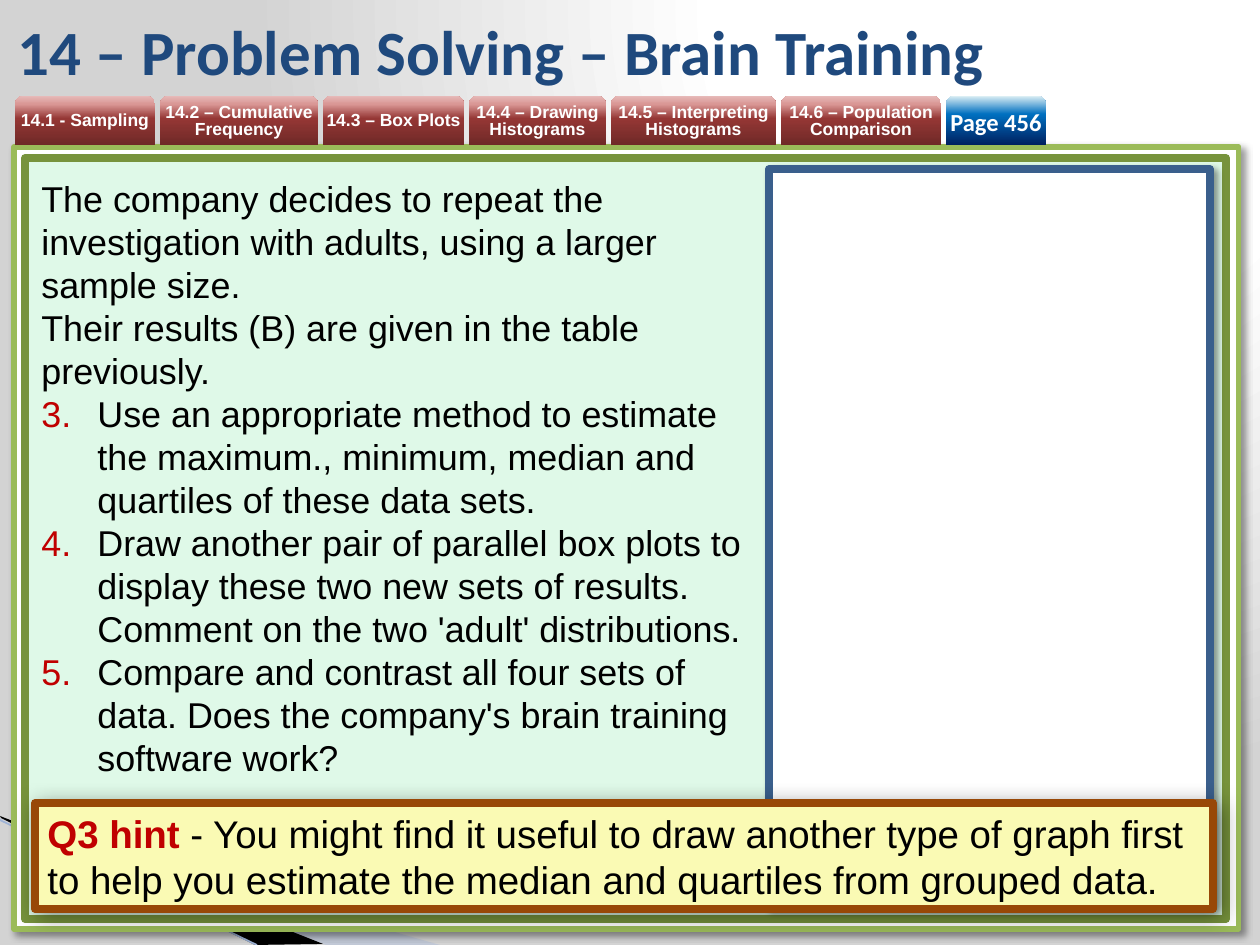
import dataclasses

import pptx
import pptx.dml.color
import pptx.enum.shapes
import pptx.enum.text
import pptx.oxml
import pptx.oxml.ns
import pptx.util

EMU_PER_PX = 914400 / 126
SHAPE = pptx.enum.shapes.MSO_SHAPE
ALIGN = pptx.enum.text.PP_ALIGN
ANCHOR = pptx.enum.text.MSO_ANCHOR
qn = pptx.oxml.ns.qn


@dataclasses.dataclass(frozen=True)
class Theme:
    heading_font: str = "Calibri"
    body_font: str = "Arial"
    title_size: float = 36
    body_size: float = 20.5
    hint_size: float = 22
    tab_size: float = 10
    page_size: float = 14
    frame_width: float = 4.33
    outer_width: float = 3
    ribbon_width: float = 0.95
    white: str = "FFFFFF"
    black: str = "000000"
    title: str = "1F497D"
    accent: str = "C00000"
    outer_line: str = "9BBB59"
    panel: str = "DFF9E8"
    panel_line: str = "77933C"
    answer_line: str = "3A5F8C"
    hint: str = "FAFAB4"
    hint_line: str = "984807"
    ribbon: str = "A7B9DB"
    ribbon_line: str = "9EB3D6"
    backdrop: tuple = ((0, "FFFFFF"), (40, "FFFFFF"), (100, "D3D3D3"))
    tab: tuple = ((0, "6F2927"), (54, "953735"), (83, "D99694"), (100, "E6B9B8"))
    page: tuple = ((0, "002060"), (63, "0070C0"), (100, "DBEEF4"))


def px(length):
    return round(length * EMU_PER_PX)


def rgb(color):
    return pptx.dml.color.RGBColor.from_string(color)


def add_xml(parent, tag, **attributes):
    element = pptx.oxml.parse_xml(f"<a:{tag} {pptx.oxml.ns.nsdecls('a')}/>")
    for key, value in attributes.items():
        element.set(key, str(value))
    parent.append(element)
    return element


class SlideBuilder:
    def __init__(self, slide, theme):
        self.slide = slide
        self.shapes = slide.shapes
        self.theme = theme

    def gradient(self, fill, holder, stops):
        fill.gradient()
        grad = next(holder.iter(qn("a:gradFill")))
        for child in list(grad):
            grad.remove(child)
        stop_list = add_xml(grad, "gsLst")
        for position, color in stops:
            stop = add_xml(stop_list, "gs", pos=position * 1000)
            add_xml(stop, "srgbClr", val=color)
        return grad

    def backdrop(self):
        grad = self.gradient(self.slide.background.fill, self.slide.element, self.theme.backdrop)
        focus = add_xml(grad, "path", path="circle")
        add_xml(focus, "fillToRect", l=65000, t=0, r=0, b=98000)

    def style(self, font, size, color, name=None, bold=False):
        font.name = name or self.theme.body_font
        font.size = pptx.util.Pt(size)
        font.bold = bold
        font.color.rgb = rgb(color)

    def title(self, text, box):
        title = self.shapes.title
        title.left, title.top, title.width, title.height = map(px, box)
        title.text_frame.text = text
        title.text_frame.vertical_anchor = ANCHOR.MIDDLE
        heading = title.text_frame.paragraphs[0]
        heading.alignment = ALIGN.LEFT
        self.style(heading.font, self.theme.title_size, self.theme.title, self.theme.heading_font, True)

    def ribbon(self, points, color, opacity=100):
        outline = self.shapes.build_freeform(*points[0], scale=EMU_PER_PX)
        outline.add_line_segments(points[1:], close=True)
        ribbon = outline.convert_to_shape()
        ribbon.shadow.inherit = False
        ribbon.fill.solid()
        ribbon.fill.fore_color.rgb = rgb(color)
        ribbon.line.fill.background()
        if opacity < 100:
            solid = ribbon.element.spPr.find(qn("a:solidFill"))
            add_xml(solid[0], "alpha", val=opacity * 1000)

    def line(self, start, end, color, width):
        edge = self.shapes.add_connector(
            pptx.enum.shapes.MSO_CONNECTOR.STRAIGHT, *map(px, start + end))
        edge.line.color.rgb = rgb(color)
        edge.line.width = pptx.util.Pt(width)
        add_xml(edge.element.spPr, "effectLst")

    def panel(self, box, fill, line, width, blur=None):
        panel = self.shapes.add_shape(SHAPE.RECTANGLE, *map(px, box))
        panel.shadow.inherit = False
        panel.fill.solid()
        panel.fill.fore_color.rgb = rgb(fill)
        panel.line.color.rgb = rgb(line)
        panel.line.width = pptx.util.Pt(width)
        if blur:
            effects = panel.element.spPr.find(qn("a:effectLst"))
            shadow = add_xml(effects, "outerShdw", blurRad=pptx.util.Pt(blur),
                             dist=pptx.util.Pt(3), dir=45 * 60000, algn="tl", rotWithShape=0)
            add_xml(add_xml(shadow, "srgbClr", val=self.theme.black), "alpha", val=40000)
        return panel

    def tab(self, text, box, stops, size, name, spacing=None):
        tab = self.shapes.add_shape(SHAPE.ROUND_2_SAME_RECTANGLE, *map(px, box))
        tab.shadow.inherit = False
        tab.line.fill.background()
        grad = self.gradient(tab.fill, tab.element.spPr, stops)
        add_xml(grad, "lin", ang=270 * 60000, scaled=0)
        frame = tab.text_frame
        frame.margin_left = frame.margin_right = frame.margin_top = frame.margin_bottom = 0
        frame.word_wrap = True
        frame.vertical_anchor = ANCHOR.MIDDLE
        frame.text = text
        label = frame.paragraphs[0]
        label.alignment = ALIGN.CENTER
        if spacing:
            label.line_spacing = pptx.util.Pt(spacing)
        self.style(label.font, size, self.theme.white, name, True)

    def body(self, box, intro, questions, first_number):
        frame = self.shapes.add_textbox(*map(px, box)).text_frame
        frame.word_wrap = True
        frame.auto_size = pptx.enum.text.MSO_AUTO_SIZE.SHAPE_TO_FIT_TEXT
        for index, text in enumerate(intro + questions):
            paragraph = frame.paragraphs[0] if index == 0 else frame.add_paragraph()
            paragraph.text = text
            if index >= len(intro):
                properties = paragraph._p.get_or_add_pPr()
                properties.set("marL", str(px(56)))
                properties.set("indent", str(-px(56)))
                add_xml(add_xml(properties, "buClr"), "srgbClr", val=self.theme.accent)
                add_xml(properties, "buAutoNum", type="arabicPeriod", startAt=first_number)
            self.style(paragraph.font, self.theme.body_size, self.theme.black)

    def hint(self, box, lead, text):
        theme = self.theme
        frame = self.panel(box, theme.hint, theme.hint_line, theme.frame_width, 13).text_frame
        frame.word_wrap = True
        frame.auto_size = pptx.enum.text.MSO_AUTO_SIZE.SHAPE_TO_FIT_TEXT
        frame.vertical_anchor = ANCHOR.MIDDLE
        paragraph = frame.paragraphs[0]
        paragraph.alignment = ALIGN.LEFT
        for words, color, bold in ((lead, theme.accent, True), (text, theme.black, False)):
            run = paragraph.add_run()
            run.text = words
            self.style(run.font, theme.hint_size, color, bold=bold)


def main():
    deck = pptx.Presentation()
    deck.slide_width, deck.slide_height = px(1260), px(945)
    theme = Theme()
    page = SlideBuilder(deck.slides.add_slide(deck.slide_layouts[5]), theme)

    page.backdrop()
    page.title("14 – Problem Solving – Brain Training", (5, 6, 1042, 89))
    page.ribbon([(0, 819), (440, 945), (326, 945), (0, 818)], theme.ribbon, 40)
    page.ribbon([(0, 816), (323, 944), (255, 945), (1, 818)], theme.black)
    page.line((0, 820), (257, 945), theme.ribbon_line, theme.ribbon_width)

    page.panel((14, 147, 1225, 782), theme.white, theme.outer_line, theme.outer_width, 4)
    page.panel((25, 158, 1201, 761), theme.panel, theme.panel_line, theme.frame_width)
    page.panel((769, 169, 441, 735), theme.white, theme.answer_line, theme.frame_width, 4)

    sections = [
        ("14.1 - Sampling", 140),
        ("14.2 – Cumulative Frequency", 158),
        ("14.3 – Box Plots", 141),
        ("14.4 – Drawing Histograms", 137),
        ("14.5 – Interpreting Histograms", 165),
        ("14.6 – Population Comparison", 160),
    ]
    left = 15
    for section, width in sections:
        page.tab(section, (left, 96, width, 49), theme.tab, theme.tab_size, theme.body_font, 10)
        left += width + 5
    page.tab("Page 456", (left, 96, 100, 49), theme.page, theme.page_size, theme.heading_font)

    page.body((29, 170, 730, 621), [
        "The company decides to repeat the investigation with adults, using a larger sample size.",
        "Their results (B) are given in the table previously.",
    ], [
        "Use an appropriate method to estimate the maximum., minimum, median and quartiles of these data sets.",
        "Draw another pair of parallel box plots to display these two new sets of results.\n"
        "Comment on the two 'adult' distributions.",
        "Compare and contrast all four sets of data. Does the company's brain training software work?",
    ], 3)
    page.hint((35, 803, 1178, 106), "Q3 hint",
              " - You might find it useful to draw another type of graph first to help you "
              "estimate the median and quartiles from grouped data.")
    deck.save("out.pptx")


if __name__ == "__main__":
    main()
